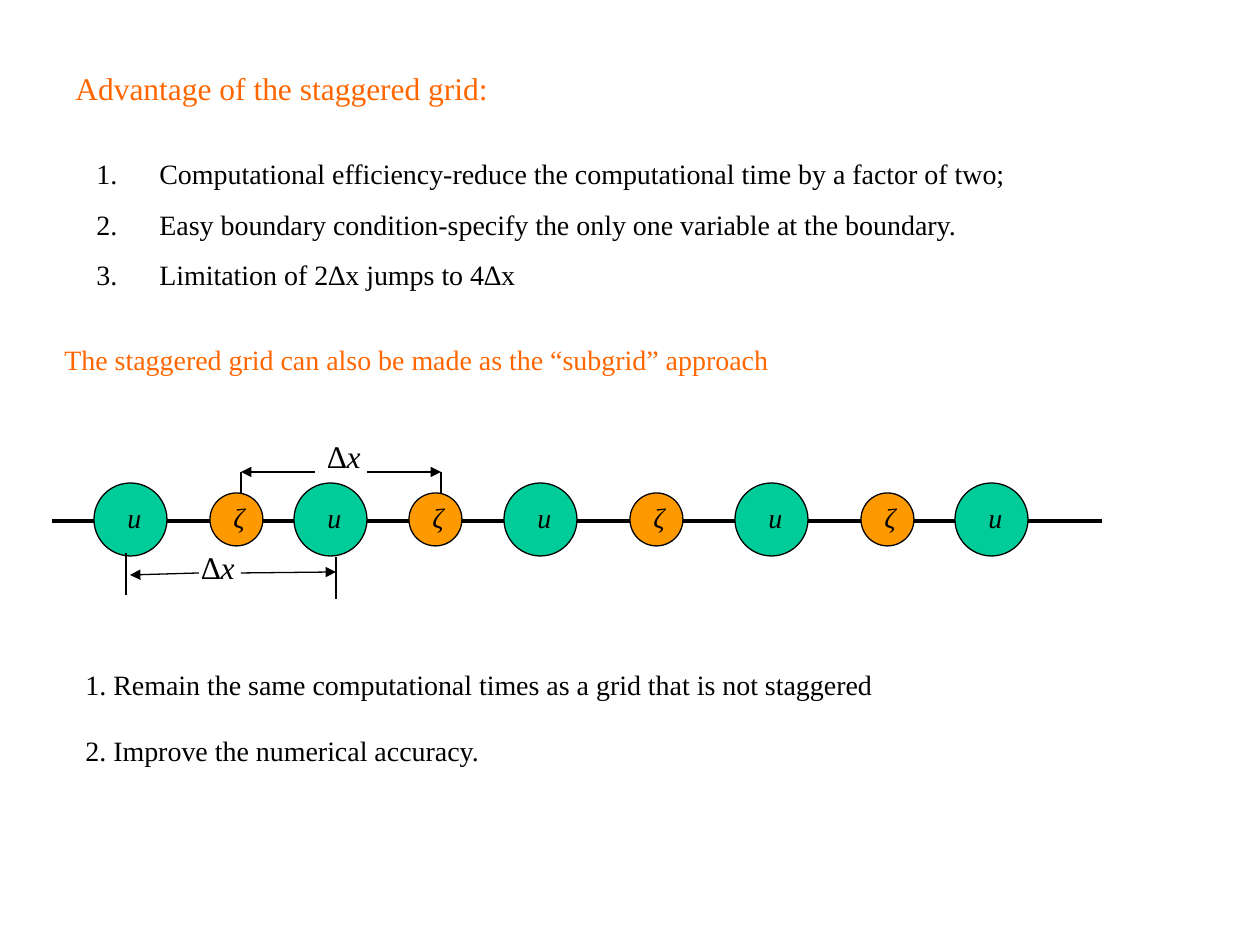
"""Build the slide on the advantages of the staggered grid."""
import pptx
import pptx.dml.color
import pptx.enum.shapes
import pptx.enum.text
import pptx.oxml.ns
import pptx.util
from lxml import etree

PX = 914400 / 126
BLACK = pptx.dml.color.RGBColor(0x00, 0x00, 0x00)
ORANGE = pptx.dml.color.RGBColor(0xFF, 0x66, 0x00)
AMBER = pptx.dml.color.RGBColor(0xFF, 0x99, 0x00)
GREEN = pptx.dml.color.RGBColor(0x00, 0xCC, 0x99)

deck = pptx.Presentation()
deck.slide_width = round(1260 * PX)
deck.slide_height = round(945 * PX)
slide = deck.slides.add_slide(deck.slide_layouts[6])


def add_text(box, paragraphs, size, color=BLACK):
    label = slide.shapes.add_textbox(*[round(v * PX) for v in box])
    frame = label.text_frame
    frame.word_wrap = False
    frame.auto_size = pptx.enum.text.MSO_AUTO_SIZE.SHAPE_TO_FIT_TEXT
    for index, runs in enumerate(paragraphs):
        paragraph = frame.add_paragraph() if index else frame.paragraphs[0]
        for words, italic in runs:
            run = paragraph.add_run()
            run.text = words
            run.font.name = "Times New Roman"
            run.font.size = pptx.util.Pt(size)
            run.font.italic = italic
            run.font.color.rgb = color
    return frame.paragraphs


def add_line(ends, width=0.75, arrow=False):
    line = slide.shapes.add_connector(
        pptx.enum.shapes.MSO_CONNECTOR.STRAIGHT, *[round(v * PX) for v in ends])
    line.line.color.rgb = BLACK
    line.line.width = pptx.util.Pt(width)
    properties = line._element.spPr
    etree.SubElement(properties, pptx.oxml.ns.qn("a:effectLst"))
    if arrow:
        outline = properties.find(pptx.oxml.ns.qn("a:ln"))
        etree.SubElement(outline, pptx.oxml.ns.qn("a:tailEnd"), type="triangle")


add_text((63, 63, 438, 50), [[("Advantage of the staggered grid:", False)]], 18, ORANGE)

advantages = [
    "Computational efficiency-reduce the computational time by a factor of two;",
    "Easy boundary condition-specify the only one variable at the boundary.",
    "Limitation of 2∆x jumps to 4∆x",
]
for advantage in add_text((84, 134, 940, 214), [[(words, False)] for words in advantages], 16):
    advantage.line_spacing = 1.5
    numbering = advantage._p.get_or_add_pPr()
    numbering.set("marL", str(round(63 * PX)))
    numbering.set("indent", str(round(-63 * PX)))
    etree.SubElement(numbering, pptx.oxml.ns.qn("a:buAutoNum"), type="arabicPeriod")

add_text((52, 336, 733, 47),
         [[("The staggered grid can also be made as the “subgrid” approach", False)]], 16, ORANGE)

add_line((52, 521, 1102, 521), 2)
node_kinds = [
    ("u", GREEN, 73, 483, 21, (94, 294, 504, 735, 955)),
    ("ζ", AMBER, 53, 493, 11, (210, 409, 630, 861)),
]
for symbol, color, diameter, top, inset, lefts in node_kinds:
    for left in lefts:
        node = slide.shapes.add_shape(
            pptx.enum.shapes.MSO_SHAPE.OVAL,
            *[round(v * PX) for v in (left, top, diameter, diameter)])
        node.shadow.inherit = False
        node.fill.solid()
        node.fill.fore_color.rgb = color
        node.line.color.rgb = BLACK
        node.line.width = pptx.util.Pt(0.75)
        add_text((left + inset, 494, 39, 47), [[(symbol, True)]], 16)

for tick in [(126, 553, 126, 595), (336, 557, 336, 599),
             (241, 472, 241, 494), (441, 472, 441, 494)]:
    add_line(tick)
for spacing_arrow in [(199, 573, 130, 575), (241, 573, 336, 572),
                      (315, 472, 241, 472), (367, 472, 441, 472)]:
    add_line(spacing_arrow, arrow=True)
for left, top in [(189, 542), (315, 431)]:
    add_text((left, top, 59, 50), [[("∆", False), ("x", True)]], 18)

benefits = [
    "1. Remain the same computational times as a grid that is not staggered",
    "2. Improve the numerical accuracy.",
]
benefit_lines = add_text((73, 661, 824, 113), [[(words, False)] for words in benefits], 16)
benefit_lines[1].space_before = pptx.util.Pt(19)

deck.save("out.pptx")
